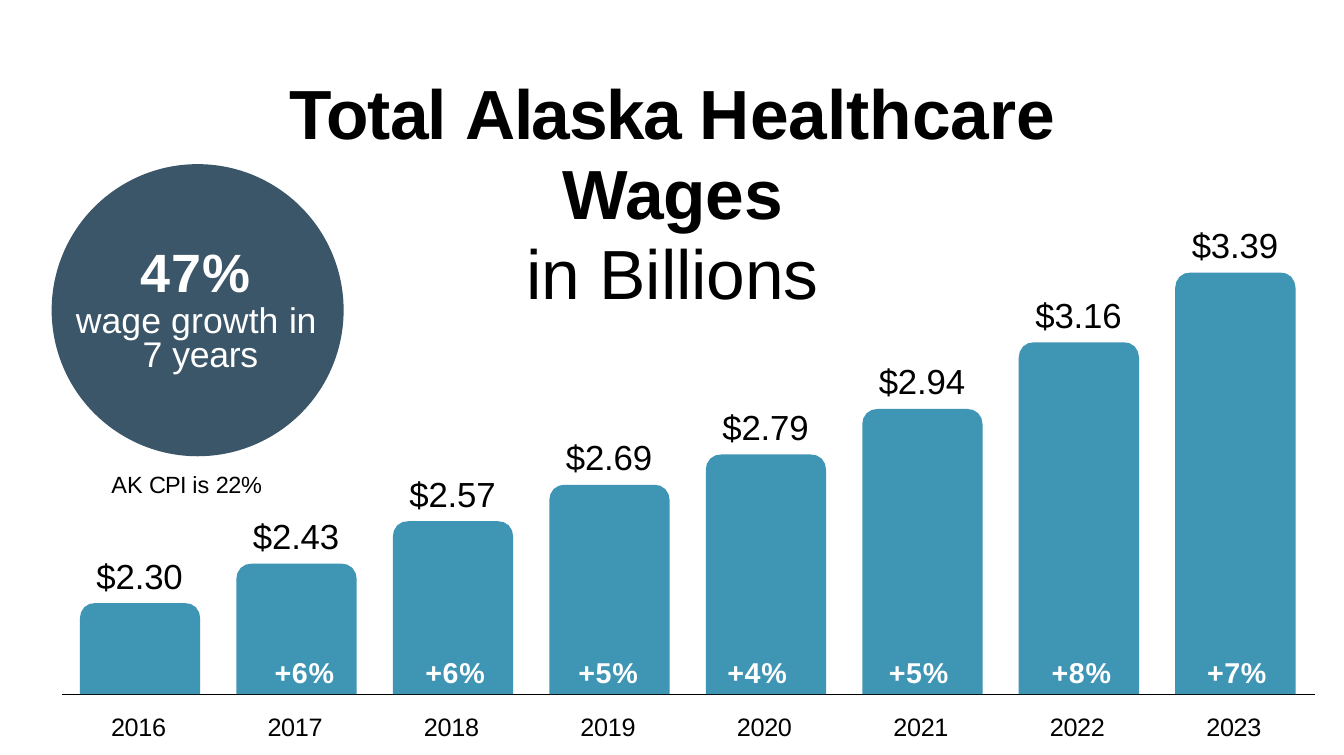
from dataclasses import dataclass

from lxml.etree import SubElement
from pptx import Presentation
from pptx.dml.color import RGBColor
from pptx.enum.shapes import MSO_CONNECTOR as Connector, MSO_SHAPE as Shape
from pptx.enum.text import MSO_ANCHOR as Anchor, PP_ALIGN as Align
from pptx.oxml.ns import qn
from pptx.util import Pt


@dataclass(frozen=True)
class Theme:
    font: str = "Arial"
    ink: RGBColor = RGBColor(0, 0, 0)
    white: RGBColor = RGBColor(255, 255, 255)
    bar: RGBColor = RGBColor(0x3F, 0x95, 0xB4)
    circle: RGBColor = RGBColor(0x3B, 0x56, 0x69)
    title_size: float = 40
    headline_size: float = 31
    caption_size: float = 20.5
    value_size: float = 20
    growth_size: float = 16.5
    year_size: float = 14.5
    note_size: float = 13.5


THEME = Theme()

WAGES = [
    ("2016", 2.30, None, 0),
    ("2017", 2.43, "+6%", 21.1),
    ("2018", 2.57, "+6%", 17.8),
    ("2019", 2.69, "+5%", 15.8),
    ("2020", 2.79, "+4%", 11.5),
    ("2021", 2.94, "+5%", 14.4),
    ("2022", 3.16, "+8%", 18),
    ("2023", 3.39, "+7%", 17.4),
]

BASELINE = 399.2
FIRST_BAR = 46
BAR_PITCH = 90.03
BAR_WIDTH = 69.2
AXIS_START = 2.0
POINTS_PER_BILLION = 174.4
CORNER = [(0, 8.7), (0.6, 5.4), (2.5, 2.4), (5.5, 0.5), (8.8, 0)]


def write_paragraph(paragraph, text, *, size, color=THEME.ink, bold=False, spacing=0,
                    align=Align.LEFT, line=None, hanging=0):
    paragraph.alignment = align
    if line:
        paragraph.line_spacing = Pt(line)
    if hanging:
        properties = paragraph._p.get_or_add_pPr()
        properties.set("marL", str(Pt(hanging)))
        properties.set("indent", str(-Pt(hanging)))
    pieces = [(text, spacing)] if isinstance(text, str) else text
    for piece, tracking in pieces:
        run = paragraph.add_run()
        run.text = piece
        run.font.name = THEME.font
        run.font.size = Pt(size)
        run.font.bold = bold
        run.font.color.rgb = color
        run._r.get_or_add_rPr().set("spc", str(round(tracking * 100)))


def prepare_frame(frame, margin_left=0.9, margin_top=1.2):
    frame.word_wrap = True
    frame.vertical_anchor = Anchor.TOP
    frame.margin_left, frame.margin_top = Pt(margin_left), Pt(margin_top)
    frame.margin_right = frame.margin_bottom = 0


def add_label(slide, text, left, top, width, height, *, margin_top=1.2, **text_format):
    box = slide.shapes.add_textbox(Pt(left), Pt(top), Pt(width), Pt(height))
    prepare_frame(box.text_frame, margin_top=margin_top)
    write_paragraph(box.text_frame.paragraphs[0], text, **text_format)


def fill_plain(shape, color):
    shape.shadow.inherit = False
    shape.fill.solid()
    shape.fill.fore_color.rgb = color
    shape.line.fill.background()


def add_axis(slide):
    axis = slide.shapes.add_connector(
        Connector.STRAIGHT, Pt(35.6), Pt(399.6), Pt(756.6), Pt(399.6))
    axis.line.color.rgb = THEME.ink
    axis.line.width = Pt(0.4)
    SubElement(axis._element.spPr, qn("a:effectLst"))


def add_title(slide):
    title = slide.shapes.title
    title.left, title.top, title.width, title.height = Pt(99.4), Pt(41), Pt(575), Pt(140)
    frame = title.text_frame
    prepare_frame(frame, margin_left=0)
    shared = dict(size=THEME.title_size, align=Align.CENTER, line=46)
    heading = [("Total ", -0.5), ("Alaska ", -0.85), ("Healthcare ", 0), ("Wages", -0.1)]
    write_paragraph(frame.paragraphs[0], heading, bold=True, **shared)
    write_paragraph(frame.add_paragraph(), [("in ", 0), ("Billions", -0.1)], **shared)


def bar_left(index):
    return FIRST_BAR + index * BAR_PITCH


def bar_top(wages):
    return BASELINE - (wages - AXIS_START) * POINTS_PER_BILLION


def bar_outline(left, top):
    right = left + BAR_WIDTH
    right_corner = [(right - inset, top + drop) for inset, drop in CORNER]
    left_corner = [(left + inset, top + drop) for inset, drop in reversed(CORNER)]
    outline = [(right, BASELINE), *right_corner, *left_corner, (left, BASELINE)]
    return [(Pt(x), Pt(y)) for x, y in outline]


def add_bars(slide):
    outlines = [bar_outline(bar_left(index), bar_top(wages))
                for index, (_, wages, _, _) in enumerate(WAGES)]
    builder = slide.shapes.build_freeform(*outlines[0][0], scale=1.0)
    for index, outline in enumerate(outlines):
        if index:
            builder.move_to(*outline[0])
        builder.add_line_segments(outline[1:], close=True)
    fill_plain(builder.convert_to_shape(), THEME.bar)


def add_bar_labels(slide, index, year, wages, growth, growth_offset):
    left = bar_left(index)
    add_label(slide, f"${wages:.2f}", left + 8.6, bar_top(wages) - 29.3, 54, 26,
              size=THEME.value_size, spacing=-0.1)
    add_label(slide, year, left + 17, 407.9, 36, 20,
              size=THEME.year_size, spacing=-0.2)
    if growth:
        add_label(slide, growth, left + growth_offset, 375.8, 40, 21, margin_top=0.9,
                  size=THEME.growth_size, color=THEME.white, bold=True, spacing=0.4)


def add_growth_circle(slide):
    circle = slide.shapes.add_shape(Shape.OVAL, Pt(29.7), Pt(94.4), Pt(168), Pt(168))
    fill_plain(circle, THEME.circle)
    add_label(slide, "47%", 80, 136, 68, 40, size=THEME.headline_size,
              color=THEME.white, bold=True, spacing=0.75)
    caption = [("wage growth ", 0.05), ("in ", -0.2), ("7 ", 0), ("years", -0.2)]
    add_label(slide, caption, 42.7, 170.4, 142, 46, margin_top=5.8, size=THEME.caption_size,
              color=THEME.white, line=19.7, hanging=38.5)
    note = [("AK ", 0), ("CPI ", -0.4), ("is ", 0), ("22%", -0.2)]
    add_label(slide, note, 63.2, 270.4, 110, 18, margin_top=0, size=THEME.note_size)


def main():
    presentation = Presentation()
    presentation.slide_width, presentation.slide_height = Pt(773.3), Pt(434.2)
    slide = presentation.slides.add_slide(presentation.slide_layouts[5])
    add_axis(slide)
    add_bars(slide)
    for index, entry in enumerate(WAGES):
        add_bar_labels(slide, index, *entry)
    add_growth_circle(slide)
    add_title(slide)
    presentation.save("out.pptx")


if __name__ == "__main__":
    main()
